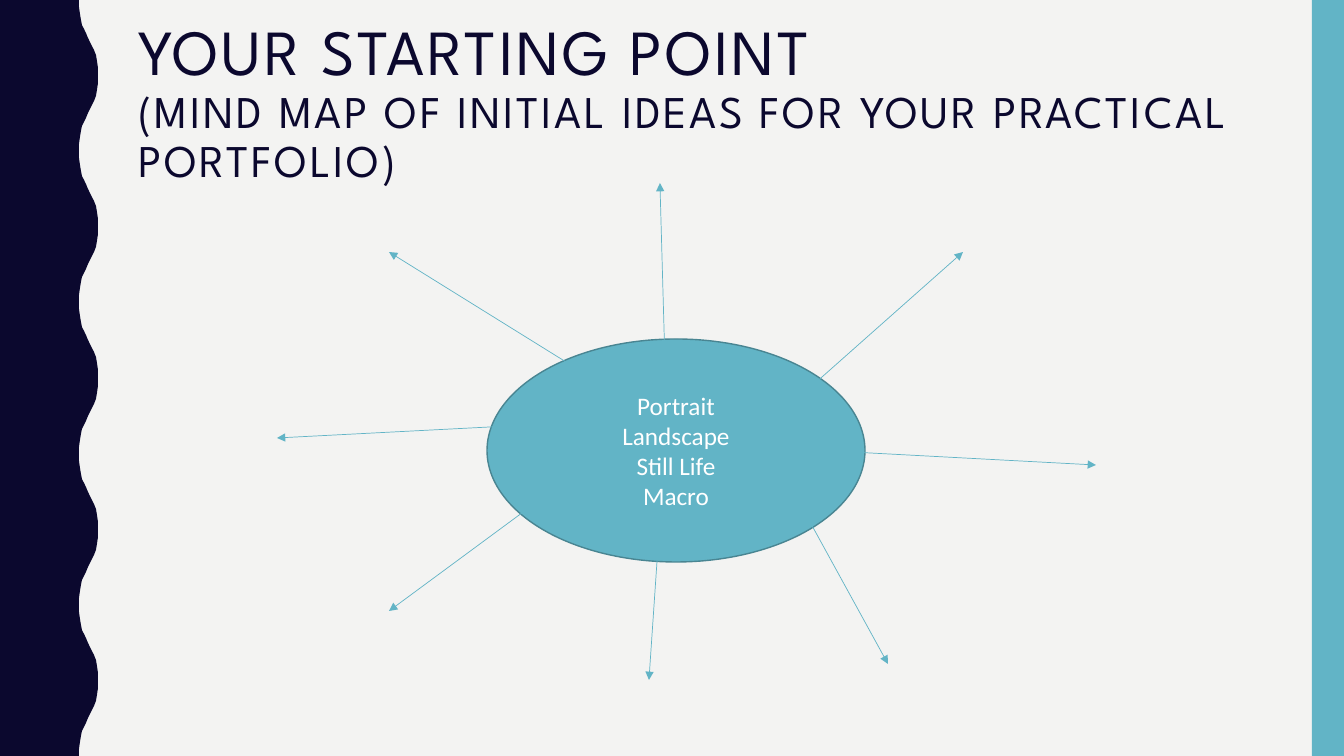
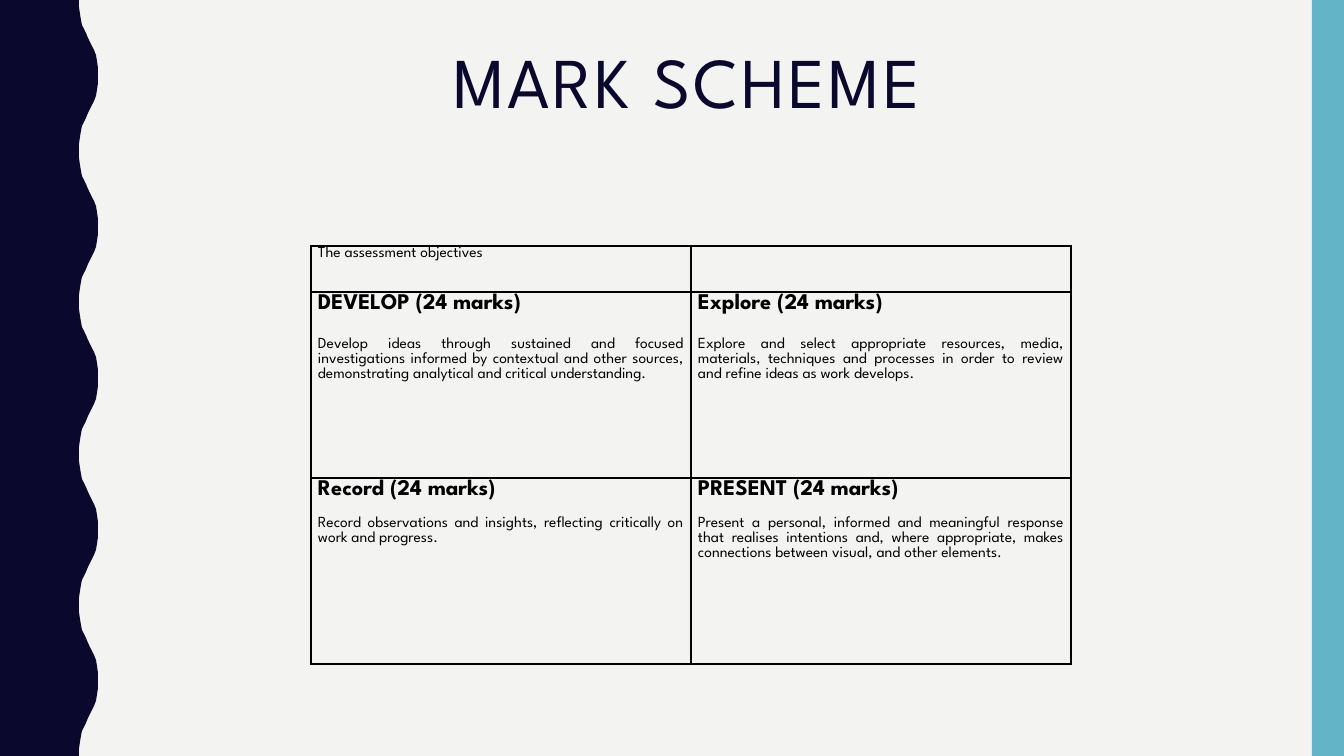
import lxml.etree
import pptx
import pptx.dml.color
import pptx.enum.shapes
import pptx.enum.text
import pptx.oxml.ns
import pptx.util

SHAPE = pptx.enum.shapes.MSO_SHAPE
ALIGN = pptx.enum.text.PP_ALIGN
ANCHOR = pptx.enum.text.MSO_ANCHOR
qn = pptx.oxml.ns.qn

SCALE = 914400 / 100.8
WIDTH, HEIGHT = 1344, 756
WAVES = 5
HALF_WAVE = [(79, 0), (79, 7), (80, 14), (81, 20), (82, 25), (84, 29), (86, 33), (88, 38),
             (90, 42), (92, 46), (94, 50), (96, 55), (97, 61), (98, 68), (98, 75.6)]
COLORS = {"paper": "F3F3F2", "navy": "0B082E", "teal": "62B4C6",
          "edge": "498592", "white": "FFFFFF", "black": "000000"}
DISPLAY, BODY = "League Spartan", "Calibri"


def px(n):
    return pptx.util.Emu(round(n * SCALE))


def rgb(name):
    return pptx.dml.color.RGBColor.from_string(COLORS[name])


class Deck:
    """Holds the shared style and the slide being built."""

    def __init__(self):
        self.prs = pptx.Presentation()
        self.prs.slide_width, self.prs.slide_height = px(WIDTH), px(HEIGHT)
        fill = self.prs.slide_master.background.fill
        fill.solid()
        fill.fore_color.rgb = rgb("paper")

    def add_slide(self):
        self.s = self.prs.slides.add_slide(self.prs.slide_layouts[5])
        self.wave()
        self.shape(SHAPE.RECTANGLE, 1312, 0, 32, HEIGHT, "teal")

    def paint(self, sp, fill, line=None):
        sp.shadow.inherit = False
        sp.fill.solid()
        sp.fill.fore_color.rgb = rgb(fill)
        if line:
            sp.line.color.rgb = rgb(line)
            sp.line.width = pptx.util.Pt(1)
        else:
            sp.line.fill.background()
        return sp

    def wave(self):
        period = HEIGHT / WAVES
        one = HALF_WAVE + [(x, period - y) for x, y in HALF_WAVE[-2::-1]]
        edge = [(x, y + i * period) for i in range(WAVES) for x, y in one]
        fb = self.s.shapes.build_freeform(0, 0, scale=SCALE)
        fb.add_line_segments(edge + [(0, HEIGHT)], close=True)
        self.paint(fb.convert_to_shape(), "navy")

    def shape(self, kind, x, y, w, h, fill, line=None):
        sp = self.s.shapes.add_shape(kind, px(x), px(y), px(w), px(h))
        return self.paint(sp, fill, line)

    def run(self, p, text, size, color, font, bold=False):
        r = p.add_run()
        r.text = text
        r.font.size, r.font.name, r.font.bold = pptx.util.Pt(size), font, bold
        r.font.color.rgb = rgb(color)
        return r

    def title(self, x, y, lines, align=ALIGN.LEFT):
        sp = self.s.shapes.title
        sp.left, sp.top, sp.width, sp.height = px(x), px(y), px(1122), px(164)
        tf = sp.text_frame
        tf.word_wrap = True
        tf.auto_size = pptx.enum.text.MSO_AUTO_SIZE.NONE
        tf.vertical_anchor = ANCHOR.TOP
        p = tf.paragraphs[0]
        p.alignment, p.line_spacing = align, 0.9
        for text, size in lines:
            r = self.run(p, text, size, "navy", DISPLAY)
            r.font._element.set("spc", "200")
            p.add_line_break()

    def ellipse(self, x, y, w, h, lines):
        tf = self.shape(SHAPE.OVAL, x, y, w, h, "teal", "edge").text_frame
        tf.vertical_anchor = ANCHOR.MIDDLE
        for i, text in enumerate(lines):
            p = tf.add_paragraph() if i else tf.paragraphs[0]
            p.alignment = ALIGN.CENTER
            self.run(p, text, 18, "white", BODY)

    def arrow(self, x1, y1, x2, y2):
        c = self.s.shapes.add_connector(pptx.enum.shapes.MSO_CONNECTOR.STRAIGHT,
                                        px(x1), px(y1), px(x2), px(y2))
        c.line.color.rgb = rgb("teal")
        c.line.width = pptx.util.Pt(0.5)
        lxml.etree.SubElement(c.line._get_or_add_ln(), qn("a:tailEnd"), type="triangle")
        lxml.etree.SubElement(c._element.spPr, qn("a:effectLst"))

    def cell(self, cell, paragraphs):
        cell.margin_left = cell.margin_right = px(7)
        cell.margin_top = cell.margin_bottom = 0
        tcPr = cell._tc.get_or_add_tcPr()
        for side in ("lnL", "lnR", "lnT", "lnB"):
            ln = lxml.etree.SubElement(tcPr, qn("a:" + side), w="12700")
            fill = lxml.etree.SubElement(ln, qn("a:solidFill"))
            lxml.etree.SubElement(fill, qn("a:srgbClr"), val=COLORS["black"])
        cell.fill.background()
        tf = cell.text_frame
        for i, (text, size, bold, gap) in enumerate(paragraphs):
            p = tf.add_paragraph() if i else tf.paragraphs[0]
            p.alignment, p.line_spacing = ALIGN.JUSTIFY, 1.07
            p.space_before = pptx.util.Pt(gap)
            self.run(p, text, size, "black", DISPLAY, bold)

    def table(self, x, y, col_width, row_heights, rows):
        cols = len(rows[0])
        frame = self.s.shapes.add_table(len(rows), cols, px(x), px(y),
                                        px(col_width * cols), px(sum(row_heights)))
        t = frame.table
        t.first_row = t.horz_banding = False
        for col in t.columns:
            col.width = px(col_width)
        for i, (height, row) in enumerate(zip(row_heights, rows)):
            t.rows[i].height = px(height)
            for j, paragraphs in enumerate(row):
                self.cell(t.cell(i, j), paragraphs)


def objective(heading, text, gap):
    return [(heading + " (24 marks)", 16, True, 0), (text, 11, False, gap)]


def main():
    deck = Deck()

    deck.add_slide()
    deck.title(128, 15, [("YOUR STARTING POINT", 45.9),
                         ("(MIND MAP OF INITIAL IDEAS FOR YOUR PRACTICAL PORTFOLIO)", 32.4)])
    deck.ellipse(487, 339, 378, 223, ["Portrait", "Landscape", "Still Life", "Macro"])
    for ends in [(813, 385, 963, 252), (666, 399, 660, 183), (587, 375, 389, 252),
                 (814, 450, 1096, 465), (793, 491, 888, 664), (660, 518, 649, 680),
                 (587, 465, 389, 611), (625, 420, 277, 438)]:
        deck.arrow(*ends)

    deck.add_slide()
    deck.title(138, 42, [("MARK SCHEME ", 51)], ALIGN.CENTER)
    deck.table(311, 246, 380, [46, 186, 186], [
        [[("The assessment objectives", 11, False, 0)], []],
        [objective("DEVELOP", "Develop ideas through sustained and focused investigations informed by "
                   "contextual and other sources, demonstrating analytical and critical understanding.", 16),
         objective("Explore", "Explore and select appropriate resources, media, materials, techniques "
                   "and processes in order to review and refine ideas as work develops.", 16)],
        [objective("Record", "Record observations and insights, reflecting critically on work and "
                   "progress.", 11),
         objective("PRESENT", "Present a personal, informed and meaningful response that realises "
                   "intentions and, where appropriate, makes connections between visual, and other "
                   "elements.", 11)],
    ])
    deck.prs.save("out.pptx")


if __name__ == "__main__":
    main()
